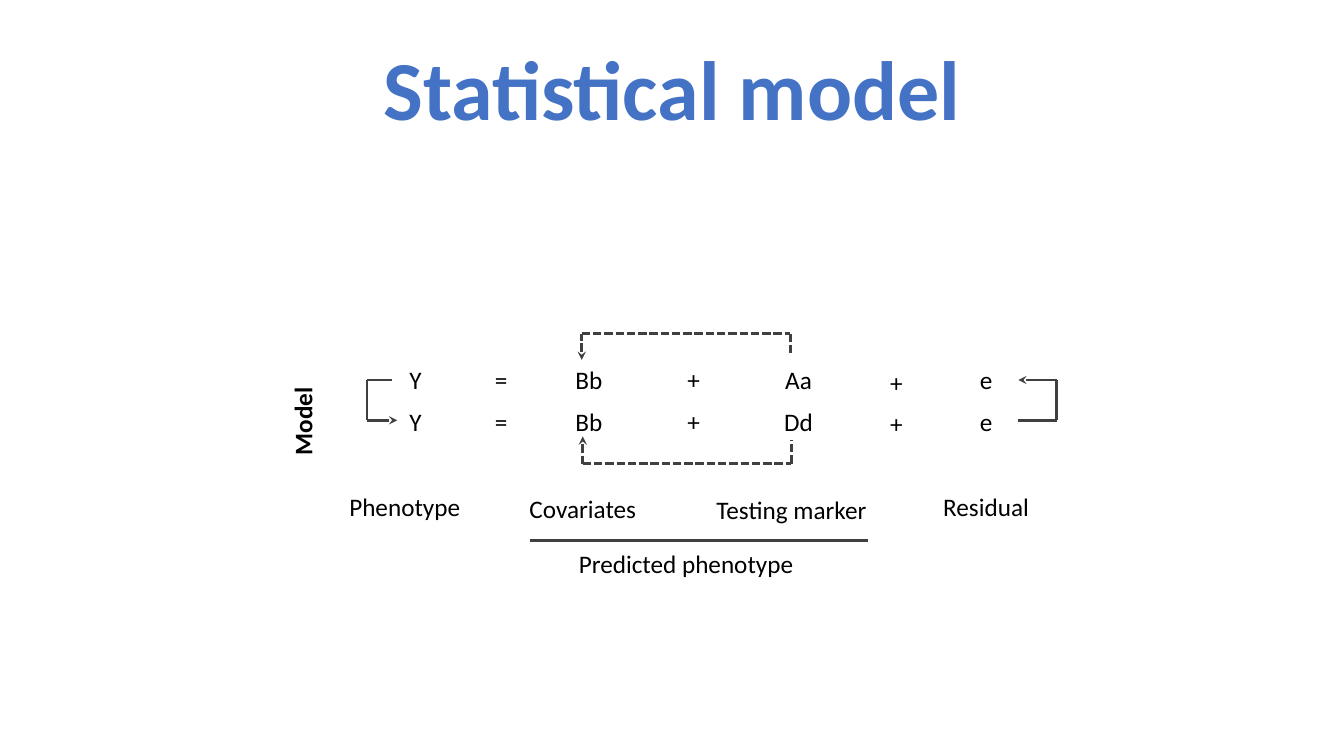
import pptx
import pptx.util
from dataclasses import dataclass
from lxml import etree
from pptx.dml.color import RGBColor
from pptx.enum.dml import MSO_LINE
from pptx.enum.shapes import MSO_CONNECTOR
from pptx.enum.text import MSO_ANCHOR, PP_ALIGN
from pptx.oxml.ns import qn

TITLE = "Statistical model"
TITLE_BOX = (0, 6, 1333, 137)
ROW_TOPS = (357, 398)
TERM_WIDTH, TEXT_HEIGHT = 138, 40
TERMS = [
    (343, 0, ("Y", "Y")),
    (428, 0, ("=", "=")),
    (515, 0, ("Bb", "Bb")),
    (619, 0, ("+", "+")),
    (723, 0, ("Aa", "Dd")),
    (820, 2, ("+", "+")),
    (909, 0, ("e", "e")),
]
LABELS = [
    ("Phenotype", 323, 483, 157),
    ("Covariates", 509, 484, 138),
    ("Testing marker", 692, 485, 186),
    ("Residual", 909, 483, 138),
    ("Predicted phenotype", 502, 539, 357),
]
SIDE_LABEL = ("Model", 231, 398, 138)
DASHED_BRACKETS = [
    [(577, 357), (577, 331), (784, 331), (784, 351)],
    [(578, 433), (578, 460), (785, 460), (785, 437)],
]
SOLID_BRACKETS = [
    [(394, 417), (364, 417), (364, 377), (389, 377)],
    [(1010, 377), (1048, 377), (1048, 417), (1010, 417)],
]
UNDERLINE = ((526, 536), (861, 536))


@dataclass(frozen=True)
class Theme:
    font: str = "Calibri"
    title: RGBColor = RGBColor(0x44, 0x72, 0xC4)
    text: RGBColor = RGBColor(0, 0, 0)
    line: RGBColor = RGBColor(0x40, 0x40, 0x40)
    title_size: int = 60
    text_size: int = 18
    line_width: int = 2


THEME = Theme()


def px(n):
    return pptx.util.Emu(n * 9144)


def write(sp, text, size, color, bold):
    tf = sp.text_frame
    tf.word_wrap = True
    p = tf.paragraphs[0]
    p.alignment = PP_ALIGN.CENTER
    r = p.add_run()
    r.text = text
    r.font.name = THEME.font
    r.font.size = pptx.util.Pt(size)
    r.font.bold = bold
    r.font.color.rgb = color
    return p


def add_label(s, text, left, top, width, bold=False):
    sp = s.shapes.add_textbox(px(left), px(top), px(width), px(TEXT_HEIGHT))
    write(sp, text, THEME.text_size, THEME.text, bold)
    return sp


def add_line(s, start, end, dashed=False, arrow=False):
    cn = s.shapes.add_connector(MSO_CONNECTOR.STRAIGHT, *map(px, start + end))
    cn.line.color.rgb = THEME.line
    cn.line.width = pptx.util.Pt(THEME.line_width)
    if dashed:
        cn.line.dash_style = MSO_LINE.SQUARE_DOT
    if arrow:
        ln = cn.line._get_or_add_ln()
        etree.SubElement(ln, qn("a:headEnd"), type="stealth")
    etree.SubElement(cn._element.spPr, qn("a:effectLst"))


def add_bracket(s, points, dashed):
    for i, (start, end) in enumerate(zip(points, points[1:])):
        add_line(s, start, end, dashed, arrow=i == 0)


def add_title(s):
    sp = s.shapes.title
    sp.left, sp.top, sp.width, sp.height = map(px, TITLE_BOX)
    sp.text_frame.vertical_anchor = MSO_ANCHOR.BOTTOM
    p = write(sp, TITLE, THEME.title_size, THEME.title, True)
    p.line_spacing = 0.9


def main():
    prs = pptx.Presentation()
    prs.slide_width, prs.slide_height = px(1333), px(750)
    s = prs.slides.add_slide(prs.slide_layouts[5])
    add_title(s)
    for left, shift, symbols in TERMS:
        for top, symbol in zip(ROW_TOPS, symbols):
            add_label(s, symbol, left, top + shift, TERM_WIDTH)
    for label in LABELS:
        add_label(s, *label)
    add_label(s, *SIDE_LABEL, bold=True).rotation = 270
    for points in DASHED_BRACKETS:
        add_bracket(s, points, True)
    for points in SOLID_BRACKETS:
        add_bracket(s, points, False)
    add_line(s, *UNDERLINE)
    prs.save("out.pptx")


if __name__ == "__main__":
    main()
